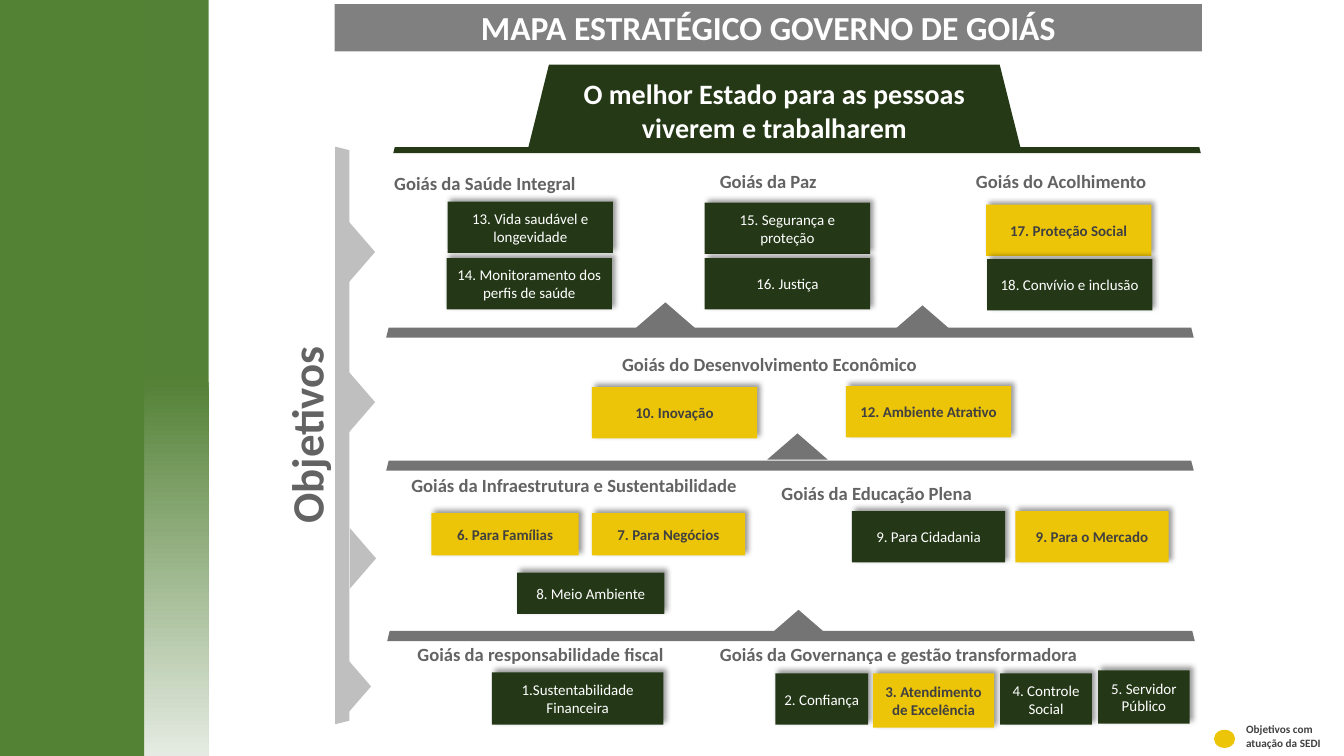
"""Builds the strategic map slide of the Goiás government."""
from pptx import Presentation
from pptx.dml.color import RGBColor
from pptx.enum.shapes import MSO_SHAPE
from pptx.enum.text import MSO_ANCHOR, MSO_AUTO_SIZE, PP_ALIGN
from pptx.oxml import parse_xml
from pptx.oxml.ns import nsdecls, qn
from pptx.util import Inches, Pt

GREEN, YELLOW, GRAY, SILVER = "243817", "EDC508", "747474", "BFBFBF"
HERO, HEADING, DARK, WHITE = "253917", "636363", "404040", "FFFFFF"
SHADOW = (
    f'<a:outerShdw {nsdecls("a")} blurRad="50800" dist="38100" dir="18900000" '
    'algn="bl" rotWithShape="0"><a:srgbClr val="000000">'
    '<a:alpha val="40000"/></a:srgbClr></a:outerShdw>'
)


def color(value):
    return RGBColor.from_string(value)


class StrategicMap:
    """Holds the text style and the current slide and draws its elements."""

    font_name = "Calibri"
    frame_format = {
        "word_wrap": True,
        "margin_left": Inches(0.07),
        "margin_right": Inches(0.07),
        "margin_top": Inches(0.03),
        "margin_bottom": Inches(0.03),
    }

    def __init__(self, slide):
        self.slide = slide

    def shape(self, kind, left, top, width, height, fill, rotation=0):
        shape = self.slide.shapes.add_shape(
            kind, Inches(left), Inches(top), Inches(width), Inches(height))
        shape.shadow.inherit = False
        shape.fill.solid()
        shape.fill.fore_color.rgb = color(fill)
        shape.line.fill.background()
        shape.rotation = rotation
        return shape

    def bar(self, left, top, width, height, fill, rotation=0):
        return self.shape(MSO_SHAPE.TRAPEZOID, left, top, width, height, fill, rotation)

    def pointer(self, left, top, fill, rotation=0):
        return self.shape(MSO_SHAPE.ISOSCELES_TRIANGLE, left, top, 0.6, 0.26, fill, rotation)

    def label(self, box, lines, size, ink, bold=True, align=PP_ALIGN.CENTER, **frame_format):
        frame = box.text_frame
        for name, value in {**self.frame_format, **frame_format}.items():
            setattr(frame, name, value)
        font_format = {"name": self.font_name, "size": Pt(size), "bold": bold}
        for index, line in enumerate(lines):
            para = frame.add_paragraph() if index else frame.paragraphs[0]
            para.alignment = align
            span = para.add_run()
            span.text = line
            for name, value in font_format.items():
                setattr(span.font, name, value)
            span.font.color.rgb = color(ink)

    def text(self, left, top, width, height, lines, size, ink, **options):
        box = self.slide.shapes.add_textbox(
            Inches(left), Inches(top), Inches(width), Inches(height))
        self.label(box, lines, size, ink, auto_size=MSO_AUTO_SIZE.SHAPE_TO_FIT_TEXT, **options)
        return box

    def heading(self, left, top, width, wording):
        return self.text(left, top, width, 0.29, [wording], 13.3, HEADING, align=PP_ALIGN.LEFT)

    def goal(self, left, top, width, height, wording, highlighted=False):
        fill, ink = (YELLOW, DARK) if highlighted else (GREEN, WHITE)
        box = self.shape(MSO_SHAPE.RECTANGLE, left, top, width, height, fill)
        box.element.spPr.find(qn("a:effectLst")).append(parse_xml(SHADOW))
        self.label(box, [wording], 10.7, ink, bold=highlighted, vertical_anchor=MSO_ANCHOR.MIDDLE)

    def side_panel(self):
        fading = self.shape(MSO_SHAPE.RECTANGLE, 0, 0, 2.07, 7.5, "538135")
        fading.fill.gradient()
        fading.fill.gradient_angle = 270
        stops = ((0.5, "538135"), (1, "E5EBE2"))
        for stop, (position, value) in zip(fading.fill.gradient_stops, stops):
            stop.position = position
            stop.color.rgb = color(value)
        self.shape(MSO_SHAPE.RECTANGLE, 0, 0, 1.43, 7.5, "538235")


GOALS = [
    (4.44, 2, 1.64, 0.51, "13. Vida saudável e longevidade"),
    (4.43, 2.56, 1.64, 0.51, "14. Monitoramento dos perfis de saúde"),
    (6.99, 2.01, 1.64, 0.51, "15. Segurança e proteção"),
    (6.99, 2.56, 1.64, 0.51, "16. Justiça"),
    (9.78, 2.03, 1.64, 0.51, "17. Proteção Social", True),
    (9.79, 2.57, 1.64, 0.51, "18. Convívio e inclusão"),
    (5.87, 3.84, 1.64, 0.51, "10. Inovação", True),
    (8.39, 3.83, 1.64, 0.51, "12. Ambiente Atrativo", True),
    (4.28, 5.09, 1.46, 0.42, "6. Para Famílias", True),
    (5.87, 5.09, 1.52, 0.42, "7. Para Negócios", True),
    (5.13, 5.68, 1.46, 0.41, "8. Meio Ambiente"),
    (8.45, 5.07, 1.52, 0.51, "9. Para Cidadania"),
    (10.07, 5.07, 1.52, 0.51, "9. Para o Mercado", True),
    (4.88, 6.67, 1.7, 0.52, "1.Sustentabilidade Financeira"),
    (7.69, 6.68, 0.92, 0.51, "2. Confiança"),
    (8.66, 6.68, 1.2, 0.54, "3. Atendimento de Excelência", True),
    (9.92, 6.68, 0.91, 0.51, "4. Controle Social"),
    (10.89, 6.65, 0.91, 0.53, "5. Servidor Público"),
]
HEADINGS = [
    (3.84, 1.68, 4.53, "Goiás da Saúde Integral"),
    (7.07, 1.66, 1.47, "Goiás da Paz"),
    (9.61, 1.66, 2.45, "Goiás do Acolhimento"),
    (6.1, 3.47, 4.39, "Goiás do Desenvolvimento Econômico"),
    (4.01, 4.67, 4.53, "Goiás da Infraestrutura e Sustentabilidade"),
    (7.68, 4.75, 4.78, "Goiás da Educação Plena"),
    (4.07, 6.35, 4.39, "Goiás da responsabilidade fiscal"),
    (7.07, 6.35, 4.78, "Goiás da Governança e gestão transformadora"),
]


def main():
    deck = Presentation()
    deck.slide_width, deck.slide_height = Inches(13.33), Inches(7.5)
    page = StrategicMap(deck.slides.add_slide(deck.slide_layouts[6]))

    page.bar(5.24, 0.64, 4.88, 0.82, HERO)
    page.bar(3.9, 1.46, 8.01, 0.06, HERO)
    for left, top in ((3.83, 3.25), (3.83, 4.57), (3.84, 6.26)):
        page.bar(left, top, 8.01, 0.1, GRAY)
    for left, top in ((6.3, 3), (8.85, 3.03), (7.61, 4.3), (7.62, 6.05)):
        page.pointer(left, top, GRAY)
    page.bar(0.53, 4.25, 5.73, 0.14, SILVER, 90)
    for left, top in ((3.29, 2.37), (3.29, 3.86), (3.3, 5.41), (3.25, 6.68)):
        page.pointer(left, top, SILVER, 90)

    for goal in GOALS:
        page.goal(*goal)
    for heading in HEADINGS:
        page.heading(*heading)

    page.text(5.29, 0.73, 4.78, 0.74,
              ["O melhor Estado para as pessoas viverem e trabalharem"], 20, WHITE)
    page.text(1.91, 4.01, 2.26, 0.61, ["Objetivos"], 32, HEADING).rotation = 270
    page.shape(MSO_SHAPE.OVAL, 12.04, 7.24, 0.21, 0.18, YELLOW)
    page.text(12.26, 7.12, 0.95, 0.37, ["Objetivos com", "atuação da SEDI"], 8, DARK,
              align=PP_ALIGN.LEFT, word_wrap=False,
              margin_left=Inches(0.1), margin_right=Inches(0.1),
              margin_top=Inches(0.05), margin_bottom=Inches(0.05))
    page.side_panel()
    title = page.shape(MSO_SHAPE.RECTANGLE, 3.32, 0.04, 8.6, 0.47, "808080")
    page.label(title, ["MAPA ESTRATÉGICO GOVERNO DE GOIÁS"], 24, WHITE,
               vertical_anchor=MSO_ANCHOR.TOP, auto_size=MSO_AUTO_SIZE.SHAPE_TO_FIT_TEXT)
    deck.save("out.pptx")


if __name__ == "__main__":
    main()
